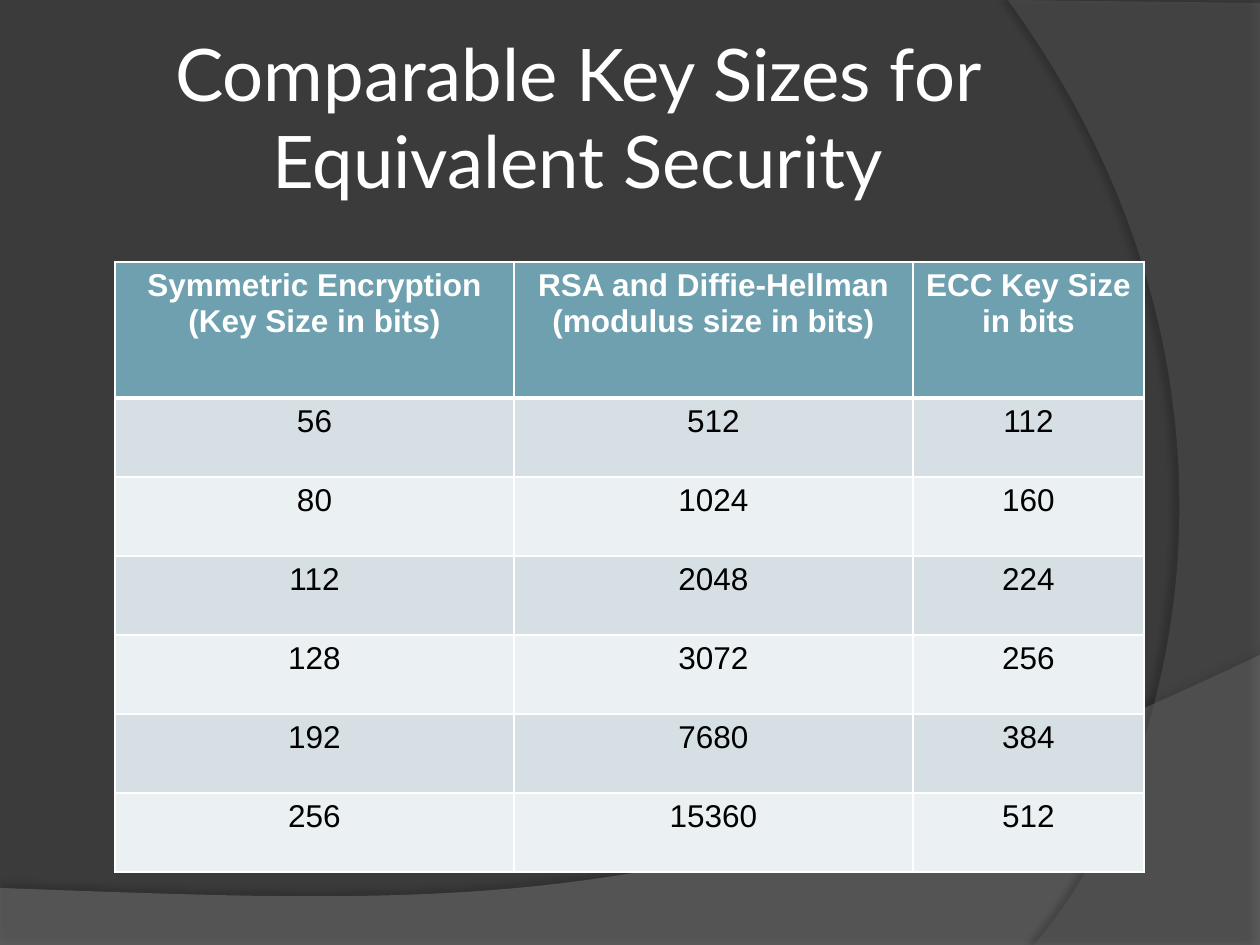
import lxml.etree
import pptx
import pptx.dml.color
import pptx.enum.text
import pptx.oxml.ns
import pptx.util

RGBColor = pptx.dml.color.RGBColor
BACKGROUND = RGBColor(0x3B, 0x3B, 0x3B)
WAVE = RGBColor(0x7F, 0x7F, 0x7F)
ARC = RGBColor(0x5E, 0x5E, 0x5E)
WHITE = RGBColor(0xFF, 0xFF, 0xFF)
BLACK = RGBColor(0x00, 0x00, 0x00)
HEADER = RGBColor(0x6E, 0xA0, 0xB0)
BANDS = (RGBColor(0xD5, 0xDF, 0xE4), RGBColor(0xEB, 0xF0, 0xF2))

HEADINGS = (
    "Symmetric Encryption (Key Size in bits)",
    "RSA and Diffie-Hellman (modulus size in bits)",
    "ECC Key Size in bits",
)
KEY_SIZES = (
    (56, 512, 112),
    (80, 1024, 160),
    (112, 2048, 224),
    (128, 3072, 256),
    (192, 7680, 384),
    (256, 15360, 512),
)


def px(length):
    """Turn pixels into EMU."""
    return pptx.util.Emu(round(length * 914400 / 126))


def add_element(parent, tag, **attributes):
    """Append a drawing element with its attributes."""
    element = lxml.etree.SubElement(parent, pptx.oxml.ns.qn(tag))
    for name, value in attributes.items():
        element.set(name, str(value))
    return element


def curve_points(start, first, second, end, steps=48):
    """Return points along a cubic curve."""
    points = []
    for step in range(steps + 1):
        t = step / steps
        weights = ((1 - t) ** 3, 3 * t * (1 - t) ** 2, 3 * t * t * (1 - t), t ** 3)
        points.append(tuple(
            sum(weight * value for weight, value in zip(weights, values))
            for values in zip(start, first, second, end)
        ))
    return points


def add_swoosh(slide, box, corners, curve, color, opacity, shadow):
    """Draw a translucent curved panel with a soft shadow inside a box."""
    left, top = box
    points = [
        (px(left + x), px(top + y)) for x, y in corners + curve_points(*curve)
    ]
    builder = slide.shapes.build_freeform(*points[0], scale=1.0)
    builder.add_line_segments(points[1:], close=True)
    shape = builder.convert_to_shape()
    shape.fill.solid()
    shape.fill.fore_color.rgb = color
    shape.line.fill.background()
    properties = shape.element.spPr
    fill_color = properties.find(".//" + pptx.oxml.ns.qn("a:srgbClr"))
    add_element(fill_color, "a:alpha", val=opacity * 1000)
    shadow_opacity, blur, distance, direction = shadow
    effects = add_element(properties, "a:effectLst")
    outer = add_element(
        effects, "a:outerShdw", blurRad=pptx.util.Pt(blur),
        dist=pptx.util.Pt(distance), dir=direction * 60000, algn="ctr", rotWithShape=0,
    )
    shadow_color = add_element(outer, "a:srgbClr", val=BLACK)
    add_element(shadow_color, "a:alpha", val=shadow_opacity * 1000)


def add_backdrop(slide):
    """Fill the background and draw its wave and arc."""
    slide.background.fill.solid()
    slide.background.fill.fore_color.rgb = BACKGROUND
    add_swoosh(
        slide, (0, 655), [(0, 233), (0, 291), (1260, 291)],
        ((1260, 0), (704, 264), (493, 251), (0, 233)), WAVE, 45, (35, 4, 3.5, 270),
    )
    add_swoosh(
        slide, (1008, 0), [(252, 3), (252, 945)],
        ((26, 945), (170, 780), (275, 378), (0, 0)), ARC, 40, (45, 4, 4, 180),
    )


def write_text(paragraph, text, font_name, size, color, bold=False):
    """Write one centred run."""
    paragraph.alignment = pptx.enum.text.PP_ALIGN.CENTER
    run = paragraph.add_run()
    run.text = text
    run.font.name = font_name
    run.font.size = pptx.util.Pt(size)
    run.font.bold = bold
    run.font.color.rgb = color


def place_title(slide, left, top, width, height):
    """Place the title in front of the backdrop."""
    title = slide.shapes.title
    title.element.getparent().append(title.element)
    title.left, title.top = px(left), px(top)
    title.width, title.height = px(width), px(height)
    frame = title.text_frame
    frame.word_wrap = True
    frame.auto_size = pptx.enum.text.MSO_AUTO_SIZE.NONE
    frame.vertical_anchor = pptx.enum.text.MSO_ANCHOR.MIDDLE
    frame.margin_left = frame.margin_right = pptx.util.Inches(0.05)
    frame.margin_top = frame.margin_bottom = pptx.util.Inches(0.05)
    write_text(
        frame.paragraphs[0], "Comparable Key Sizes for Equivalent Security",
        "Lato", 41.4, WHITE,
    )


def format_cell(cell, fill, top_width, bottom_width):
    """Fill a cell and give it white borders."""
    properties = cell._tc.get_or_add_tcPr()
    widths = {"a:lnL": 1, "a:lnR": 1, "a:lnT": top_width, "a:lnB": bottom_width}
    for tag, width in widths.items():
        line = add_element(properties, tag, w=pptx.util.Pt(width))
        line_fill = add_element(line, "a:solidFill")
        add_element(line_fill, "a:srgbClr", val=WHITE)
    cell.fill.solid()
    cell.fill.fore_color.rgb = fill


def add_key_table(slide, left, top, column_widths, header_height, row_height):
    """Build the table of comparable key sizes."""
    rows = (HEADINGS,) + KEY_SIZES
    heights = [header_height] + [row_height] * len(KEY_SIZES)
    table = slide.shapes.add_table(
        len(rows), len(HEADINGS), px(left), px(top),
        px(sum(column_widths)), px(sum(heights)),
    ).table
    for column, width in zip(table.columns, column_widths):
        column.width = px(width)
    for index, (row, height, values) in enumerate(zip(table.rows, heights, rows)):
        row.height = px(height)
        is_header = index == 0
        fill = HEADER if is_header else BANDS[(index - 1) % 2]
        for cell, value in zip(row.cells, values):
            format_cell(cell, fill, 3 if index == 1 else 1, 3 if is_header else 1)
            write_text(
                cell.text_frame.paragraphs[0], str(value), "Arial", 18,
                WHITE if is_header else BLACK, is_header,
            )


def main():
    """Build and save the slide."""
    presentation = pptx.Presentation()
    presentation.slide_width, presentation.slide_height = px(1260), px(945)
    slide = presentation.slides.add_slide(presentation.slide_layouts[5])
    add_backdrop(slide)
    place_title(slide, 63, 38, 1029, 157)
    add_key_table(slide, 115, 262, (399, 399, 231), 136, 79)
    presentation.save("out.pptx")


if __name__ == "__main__":
    main()
